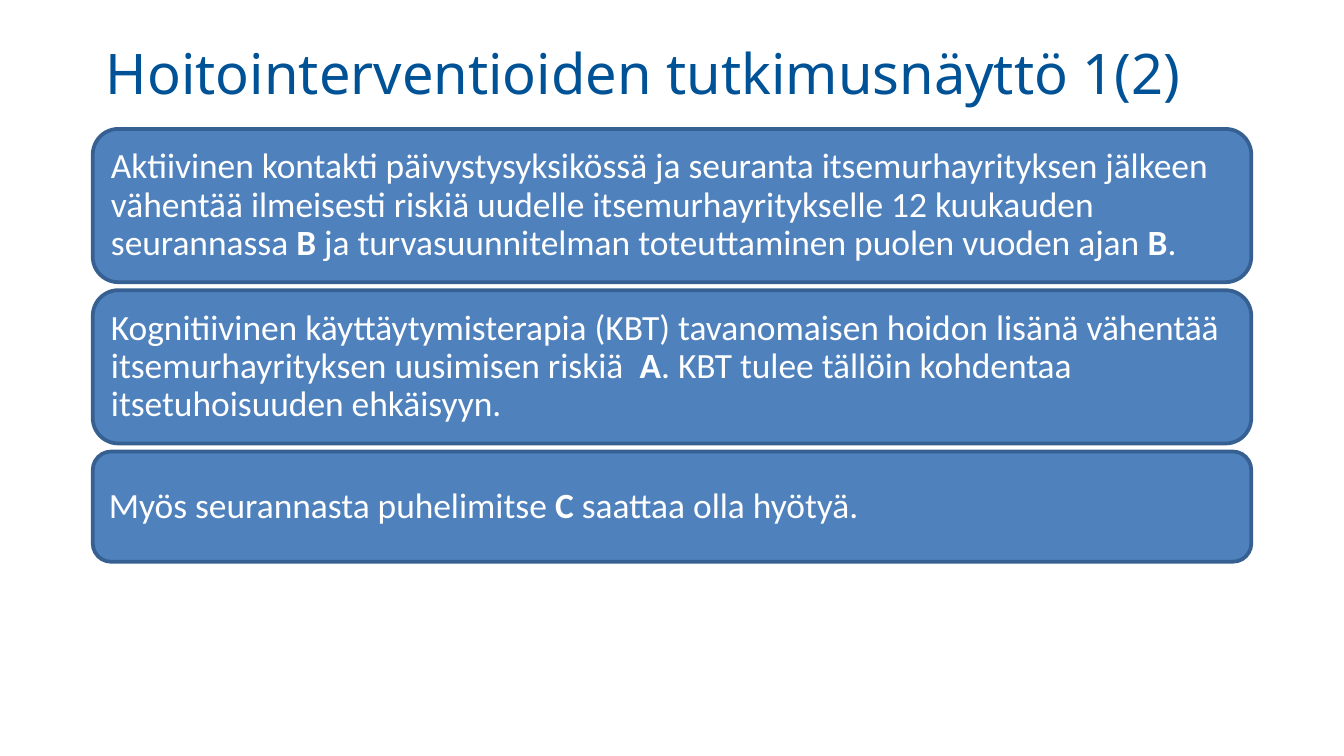
import dataclasses
import typing

import pptx
import pptx.dml.color
import pptx.enum.shapes
import pptx.enum.text
import pptx.slide
import pptx.text.text
import pptx.util
from pptx.util import Inches


@dataclasses.dataclass(frozen=True)
class Theme:
    title_color: str = "005296"
    card_fill: str = "4F81BD"
    card_border: str = "376092"
    card_text: str = "FFFFFF"
    title_font: str = "Noto Sans"
    body_font: str = "Calibri"
    title_size: int = 30
    body_size: int = 19
    border_width: int = 2


class Span(typing.NamedTuple):
    text: str
    bold: bool = False


class Finding(typing.NamedTuple):
    height: float
    spans: list[Span]


THEME = Theme()
SLIDE_WIDTH = 10
SLIDE_HEIGHT = SLIDE_WIDTH * 9 / 16
LEFT, WIDTH = 0.69, 8.62
CARDS_TOP, CARD_GAP = 0.96, 0.06
CARD_INSET = 0.08

FINDINGS = [
    Finding(1.14, [
        Span("Aktiivinen kontakti päivystysyksikössä ja seuranta itsemurhayrityksen jälkeen "
             "vähentää ilmeisesti riskiä uudelle itsemurhayritykselle 12 kuukauden seurannassa "),
        Span("B", True),
        Span(" ja turvasuunnitelman toteuttaminen puolen vuoden ajan "),
        Span("B", True),
        Span("."),
    ]),
    Finding(1.14, [
        Span("Kognitiivinen käyttäytymisterapia (KBT) tavanomaisen hoidon lisänä vähentää "
             "itsemurhayrityksen uusimisen riskiä  "),
        Span("A", True),
        Span(". KBT tulee tällöin kohdentaa itsetuhoisuuden ehkäisyyn."),
    ]),
    Finding(0.82, [
        Span("Myös seurannasta puhelimitse "),
        Span("C", True),
        Span(" saattaa olla hyötyä."),
    ]),
]


def rgb(code: str) -> pptx.dml.color.RGBColor:
    return pptx.dml.color.RGBColor.from_string(code)


def add_span(paragraph: pptx.text.text._Paragraph, span: Span,
             font: str, size: int, color: str) -> None:
    run = paragraph.add_run()
    run.text = span.text
    run.font.name = font
    run.font.size = pptx.util.Pt(size)
    run.font.bold = span.bold
    run.font.color.rgb = rgb(color)


def draw_title(slide: pptx.slide.Slide, text: str) -> None:
    heading = slide.shapes.add_textbox(Inches(LEFT), Inches(0.24), Inches(WIDTH), Inches(0.61))
    heading.text_frame.word_wrap = True
    add_span(heading.text_frame.paragraphs[0], Span(text),
             THEME.title_font, THEME.title_size, THEME.title_color)


def draw_finding(slide: pptx.slide.Slide, finding: Finding, top: float) -> None:
    card = slide.shapes.add_shape(
        pptx.enum.shapes.MSO_SHAPE.ROUNDED_RECTANGLE,
        Inches(LEFT), Inches(top), Inches(WIDTH), Inches(finding.height))
    card.shadow.inherit = False
    card.fill.solid()
    card.fill.fore_color.rgb = rgb(THEME.card_fill)
    card.line.color.rgb = rgb(THEME.card_border)
    card.line.width = pptx.util.Pt(THEME.border_width)

    frame = card.text_frame
    frame.word_wrap = True
    frame.vertical_anchor = pptx.enum.text.MSO_ANCHOR.MIDDLE
    frame.margin_left = frame.margin_right = Inches(CARD_INSET)
    frame.margin_top = frame.margin_bottom = Inches(CARD_INSET)
    statement = frame.paragraphs[0]
    statement.alignment = pptx.enum.text.PP_ALIGN.LEFT
    statement.line_spacing = 0.9
    for span in finding.spans:
        add_span(statement, span, THEME.body_font, THEME.body_size, THEME.card_text)


def main() -> None:
    """Build the slide on research evidence for treatment interventions."""
    deck = pptx.Presentation()
    deck.slide_width, deck.slide_height = Inches(SLIDE_WIDTH), Inches(SLIDE_HEIGHT)
    slide = deck.slides.add_slide(deck.slide_layouts[6])
    draw_title(slide, "Hoitointerventioiden tutkimusnäyttö 1(2)")
    top = CARDS_TOP
    for finding in FINDINGS:
        draw_finding(slide, finding, top)
        top += finding.height + CARD_GAP
    deck.save("out.pptx")


if __name__ == "__main__":
    main()
